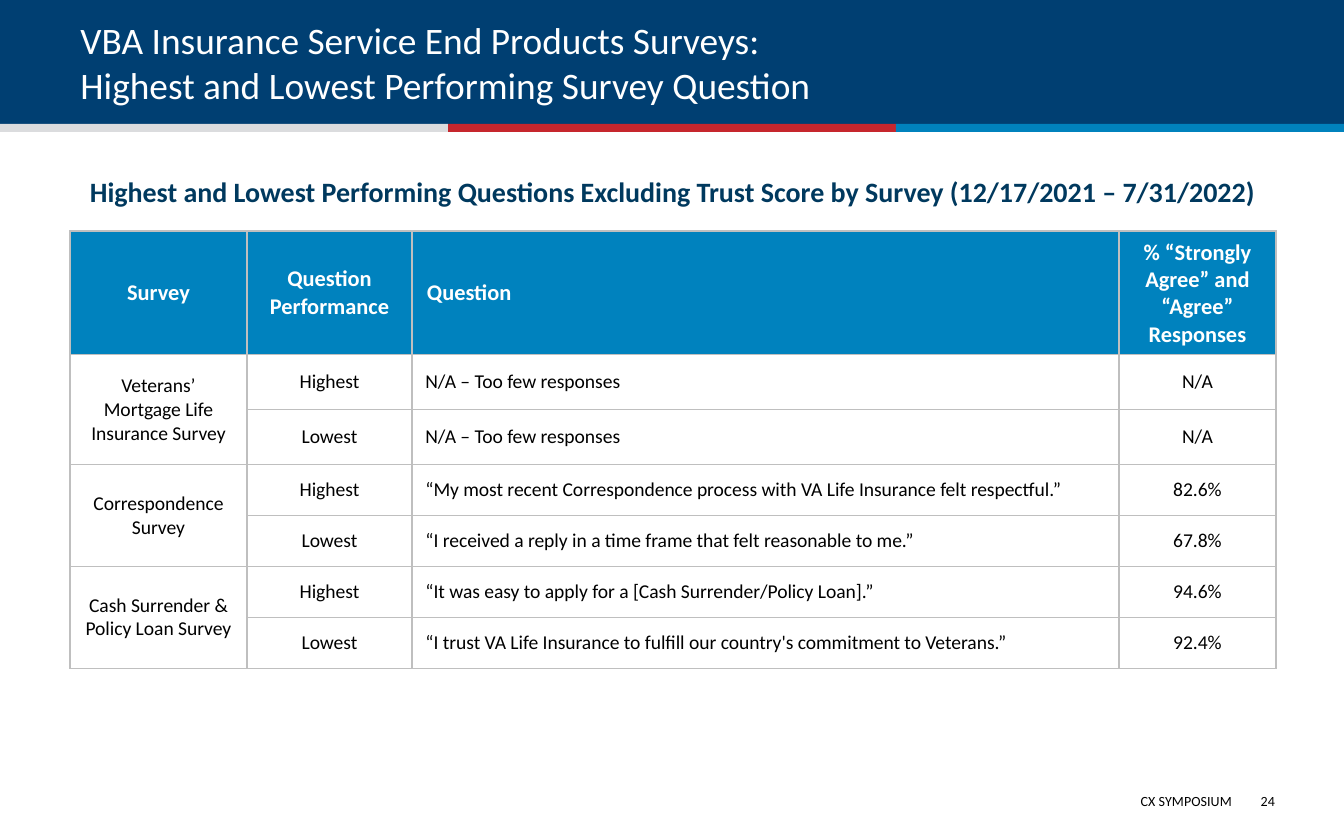
from lxml import etree
from pptx import Presentation
from pptx.dml.color import RGBColor
from pptx.enum.shapes import MSO_SHAPE
from pptx.enum.text import MSO_ANCHOR, MSO_AUTO_SIZE, PP_ALIGN
from pptx.oxml.ns import qn
from pptx.util import Emu, Pt

RECTANGLE = MSO_SHAPE.RECTANGLE
LEFT, CENTER, RIGHT = PP_ALIGN.LEFT, PP_ALIGN.CENTER, PP_ALIGN.RIGHT
TOP, MIDDLE, BOTTOM = MSO_ANCHOR.TOP, MSO_ANCHOR.MIDDLE, MSO_ANCHOR.BOTTOM
NO_AUTOFIT = MSO_AUTO_SIZE.NONE

FONT = "Calibri"
SLIDE_WIDTH, SLIDE_HEIGHT = 1344, 840
COLORS = {
    "navy": "003F72", "heading": "00395E", "gray": "DBDCDE", "red": "C6262D",
    "blue": "0082BD", "header": "0082BE", "border": "BFBFBF",
    "white": "FFFFFF", "black": "000000",
}
TITLE = ["VBA Insurance Service End Products Surveys:",
         "Highest and Lowest Performing Survey Question"]
SUBTITLE = ("Highest and Lowest Performing Questions Excluding Trust Score "
            "by Survey (12/17/2021 – 7/31/2022)")
HEADERS = [["Survey"], ["Question Performance"], ["Question"],
           ["% “Strongly Agree” and", "“Agree” Responses"]]
SURVEYS = [
    ("Veterans’ Mortgage Life Insurance Survey", [
        ("Highest", "N/A – Too few responses", "N/A"),
        ("Lowest", "N/A – Too few responses", "N/A")]),
    ("Correspondence Survey", [
        ("Highest", "“My most recent Correspondence process with VA Life "
                    "Insurance felt respectful.”", "82.6%"),
        ("Lowest", "“I received a reply in a time frame that felt reasonable "
                   "to me.”", "67.8%")]),
    ("Cash Surrender & Policy Loan Survey", [
        ("Highest", "“It was easy to apply for a [Cash Surrender/Policy Loan].”",
         "94.6%"),
        ("Lowest", "“I trust VA Life Insurance to fulfill our country's "
                   "commitment to Veterans.”", "92.4%")]),
]
COLUMN_WIDTHS = [177, 165, 707, 157]
COLUMN_ALIGNS = [CENTER, CENTER, LEFT, CENTER]
ROW_HEIGHTS = [122, 55, 55, 51, 51, 51, 51]


def px(length):
    """Turn a length in pixels into EMU."""
    return Emu(round(length * 914400 / 134.4))


def color(name):
    """Return the named colour."""
    return RGBColor.from_string(COLORS[name])


def write_lines(frame, lines, size, ink, align, bold=False):
    """Write lines of one paragraph, parted by line breaks."""
    para = frame.paragraphs[0]
    para.alignment = align
    for index, line in enumerate(lines):
        if index:
            para.add_line_break()
        span = para.add_run()
        span.text = line
        span.font.name = FONT
        span.font.size = Pt(size)
        span.font.bold = bold
        span.font.color.rgb = color(ink)


def add_bar(page, box, fill):
    """Add a plain filled rectangle."""
    bar = page.shapes.add_shape(RECTANGLE, *map(px, box))
    bar.shadow.inherit = False
    bar.fill.solid()
    bar.fill.fore_color.rgb = color(fill)
    bar.line.fill.background()


def add_label(page, box, text, size, ink, align, anchor=TOP, bold=False, inset=None):
    """Add a wrapped one-paragraph text box."""
    frame = page.shapes.add_textbox(*map(px, box)).text_frame
    frame.word_wrap = True
    frame.vertical_anchor = anchor
    if inset is not None:
        frame.margin_left = frame.margin_right = px(inset)
        frame.margin_top = frame.margin_bottom = px(inset)
    write_lines(frame, [text], size, ink, align, bold)


def add_banner(page, box):
    """Place the navy banner, its three-colour stripe and the title."""
    left, top, width, height = box
    add_bar(page, (left, top, width, height - 4), "navy")
    stripe = width // 3
    for index, fill in enumerate(["gray", "red", "blue"]):
        add_bar(page, (left + index * stripe, top + height - 8, stripe, 8), fill)
    title = page.shapes.title
    title.left, title.top = px(left + 67), px(top + 15)
    title.width, title.height = px(width - 134), px(99)
    title.element.getparent().append(title.element)
    frame = title.text_frame
    frame.auto_size = NO_AUTOFIT
    frame.vertical_anchor = BOTTOM
    write_lines(frame, TITLE, 20, "white", LEFT)


def set_borders(cell):
    """Give a cell thin gray lines on all four sides."""
    properties = cell._tc.get_or_add_tcPr()
    for index, side in enumerate(["a:lnL", "a:lnR", "a:lnT", "a:lnB"]):
        line = etree.Element(qn(side), w=str(Pt(1)))
        fill = etree.SubElement(line, qn("a:solidFill"))
        etree.SubElement(fill, qn("a:srgbClr"), val=COLORS["border"])
        properties.insert(index, line)


def fill_cell(cell, lines, align, header=False):
    """Format one table cell and write its text."""
    cell.vertical_anchor = MIDDLE
    if header:
        cell.margin_left = cell.margin_right = px(15)
        cell.margin_top = cell.margin_bottom = px(8)
    size, ink = (12, "white") if header else (10.5, "black")
    write_lines(cell.text_frame, lines, size, ink, align, header)


def add_survey_table(page, box):
    """Place the table of highest and lowest questions by survey."""
    table = page.shapes.add_table(
        len(ROW_HEIGHTS), len(COLUMN_WIDTHS), *map(px, box)).table
    for column, width in zip(table.columns, COLUMN_WIDTHS):
        column.width = px(width)
    for index, (row, height) in enumerate(zip(table.rows, ROW_HEIGHTS)):
        row.height = px(height)
        for cell in row.cells:
            cell.fill.solid()
            cell.fill.fore_color.rgb = color("white" if index else "header")
            set_borders(cell)
    for column, lines in enumerate(HEADERS):
        fill_cell(table.cell(0, column), lines, COLUMN_ALIGNS[column], True)
    for group, (survey, results) in enumerate(SURVEYS):
        first = 1 + group * len(results)
        table.cell(first, 0).merge(table.cell(first + len(results) - 1, 0))
        fill_cell(table.cell(first, 0), [survey], CENTER)
        for offset, result in enumerate(results):
            for column, text in enumerate(result, 1):
                fill_cell(table.cell(first + offset, column), [text],
                          COLUMN_ALIGNS[column])


def add_footer(page, box):
    """Place the event name and the page number."""
    left, top, width, height = box
    add_label(page, (left, top + 8, width - 30, 31), "CX SYMPOSIUM",
              7.5, "black", RIGHT)
    add_label(page, (left + width - 36, top, 36, height), "24",
              7.5, "black", RIGHT, MIDDLE, inset=0)


def main():
    """Build the slide and save the deck."""
    deck = Presentation()
    deck.slide_width, deck.slide_height = px(SLIDE_WIDTH), px(SLIDE_HEIGHT)
    page = deck.slides.add_slide(deck.slide_layouts[5])
    add_banner(page, (0, 0, SLIDE_WIDTH, 132))
    add_label(page, (70, 168, 1206, 47), SUBTITLE, 15, "heading", CENTER, bold=True)
    add_survey_table(page, (70, 231, sum(COLUMN_WIDTHS), sum(ROW_HEIGHTS)))
    add_footer(page, (556, 778, 719, 45))
    deck.save("out.pptx")


if __name__ == "__main__":
    main()
